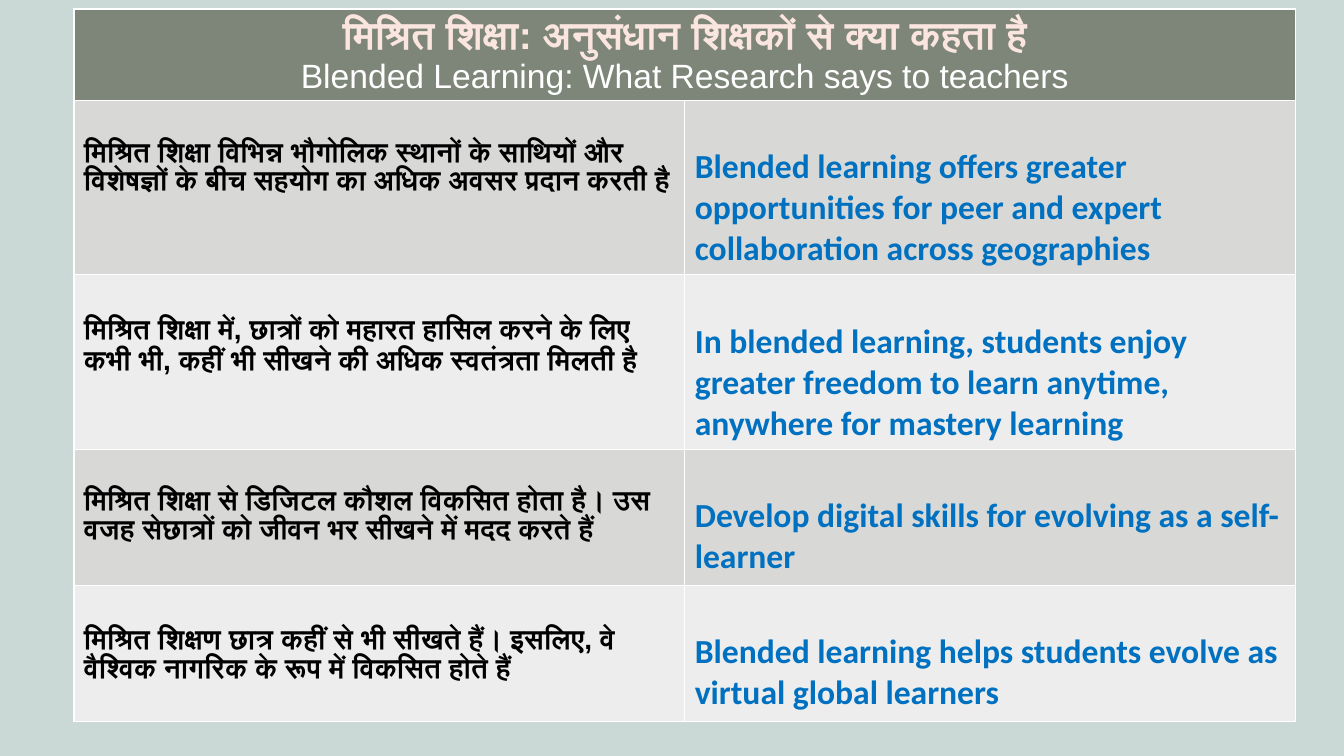
"""Bilingual slide on what research says to teachers about blended learning."""
from dataclasses import dataclass
from lxml import etree
from pptx import Presentation, util as u
from pptx.dml.color import RGBColor
from pptx.enum import text as t
from pptx.oxml.ns import qn


@dataclass(frozen=True)
class Theme:
    """Colours, fonts and type sizes."""
    back: str = "CAD8D6"
    head: str = "7E8679"
    bands: tuple = ("D8D9D7", "ECEDEC")
    line: str = "FFFFFF"
    title: str = "FAE5DF"
    hindi: str = "000000"
    english: str = "0070C0"
    sans: str = "Arial"
    body: str = "Calibri"
    big: int = 28
    mid: int = 24
    small: int = 20


class Deck:
    """Style and current slide, with lengths as shares of the slide."""

    def __init__(self, theme):
        """Open a blank slide with its background."""
        self.theme = theme
        self.prs = Presentation()
        self.prs.slide_width, self.prs.slide_height = u.Inches(13.33), u.Inches(7.5)
        self.slide = self.prs.slides.add_slide(self.prs.slide_layouts[6])
        self.paint(self.slide.background.fill, theme.back)

    def paint(self, fill, color):
        """Make a fill solid."""
        fill.solid()
        fill.fore_color.rgb = RGBColor.from_string(color)

    def wide(self, share):
        """Turn a share of the width into a length."""
        return int(self.prs.slide_width * share)

    def high(self, share):
        """Turn a share of the height into a length."""
        return int(self.prs.slide_height * share)

    def grid(self, left, top, width, cols, rows):
        """Add a table with equal columns and given row shares."""
        frame = self.slide.shapes.add_table(
            len(rows), cols, self.wide(left), self.high(top),
            self.wide(width), self.high(sum(rows)))
        for row, share in zip(frame.table.rows, rows):
            row.height = self.high(share)
        return frame.table

    def cell(self, cell, fill, **form):
        """Fill and rule a cell."""
        for name, value in form.items():
            setattr(cell, name, value)
        props = cell._tc.get_or_add_tcPr()
        for side in ("lnL", "lnR", "lnT", "lnB"):
            line = etree.SubElement(props, qn("a:" + side), w=str(u.Pt(1)))
            solid = etree.SubElement(line, qn("a:solidFill"))
            etree.SubElement(solid, qn("a:srgbClr"), val=self.theme.line)
        self.paint(cell.fill, fill)

    def run(self, para, words, color, **form):
        """Add styled words to a paragraph."""
        run = para.add_run()
        run.text = words
        for name, value in form.items():
            setattr(run.font, name, value)
        run.font.color.rgb = RGBColor.from_string(color)


ROWS = [
    ("मिश्रित शिक्षा विभिन्न भौगोलिक स्थानों के साथियों और विशेषज्ञों के बीच सहयोग का अधिक अवसर प्रदान करती है",
     "Blended learning offers greater opportunities for peer and expert collaboration across geographies"),
    ("मिश्रित शिक्षा में, छात्रों को महारत हासिल करने के लिए कभी भी, कहीं भी सीखने की अधिक स्वतंत्रता मिलती है",
     "In blended learning, students enjoy greater freedom to learn anytime, anywhere for mastery learning"),
    ("मिश्रित शिक्षा से डिजिटल कौशल विकसित होता है। उस वजह सेछात्रों को जीवन भर सीखने में मदद करते हैं",
     "Develop digital skills for evolving as a self-learner"),
    ("मिश्रित शिक्षण छात्र कहीं से भी सीखते हैं। इसलिए, वे वैश्विक नागरिक के रूप में विकसित होते हैं",
     "Blended learning helps students evolve as virtual global learners"),
]


def main():
    """Build and save the slide."""
    look = Theme()
    deck = Deck(look)
    table = deck.grid(0.055, 0.012, 0.909, 2, [0.12, 0.23, 0.23, 0.18, 0.18])

    head = table.cell(0, 0)
    head.merge(table.cell(0, 1))
    deck.cell(head, look.head)
    para = head.text_frame.paragraphs[0]
    para.alignment = t.PP_ALIGN.CENTER
    deck.run(para, "मिश्रित शिक्षा: अनुसंधान शिक्षकों से क्या कहता है", look.title,
             name=look.sans, size=u.Pt(look.big), bold=True)
    para.add_line_break()
    deck.run(para, "Blended Learning: What Research says to teachers", look.line,
             name=look.sans, size=u.Pt(look.mid), bold=False)

    styles = [(look.hindi, look.sans, look.small, 0.39),
              (look.english, look.body, look.mid, 0.46)]
    for row, pair in enumerate(ROWS, 1):
        for col, (words, (color, font, size, gap)) in enumerate(zip(pair, styles)):
            cell = table.cell(row, col)
            deck.cell(cell, look.bands[(row - 1) % 2], margin_top=u.Inches(gap))
            deck.run(cell.text_frame.paragraphs[0], words, color,
                     name=font, size=u.Pt(size), bold=True)
    deck.prs.save("out.pptx")


if __name__ == "__main__":
    main()
